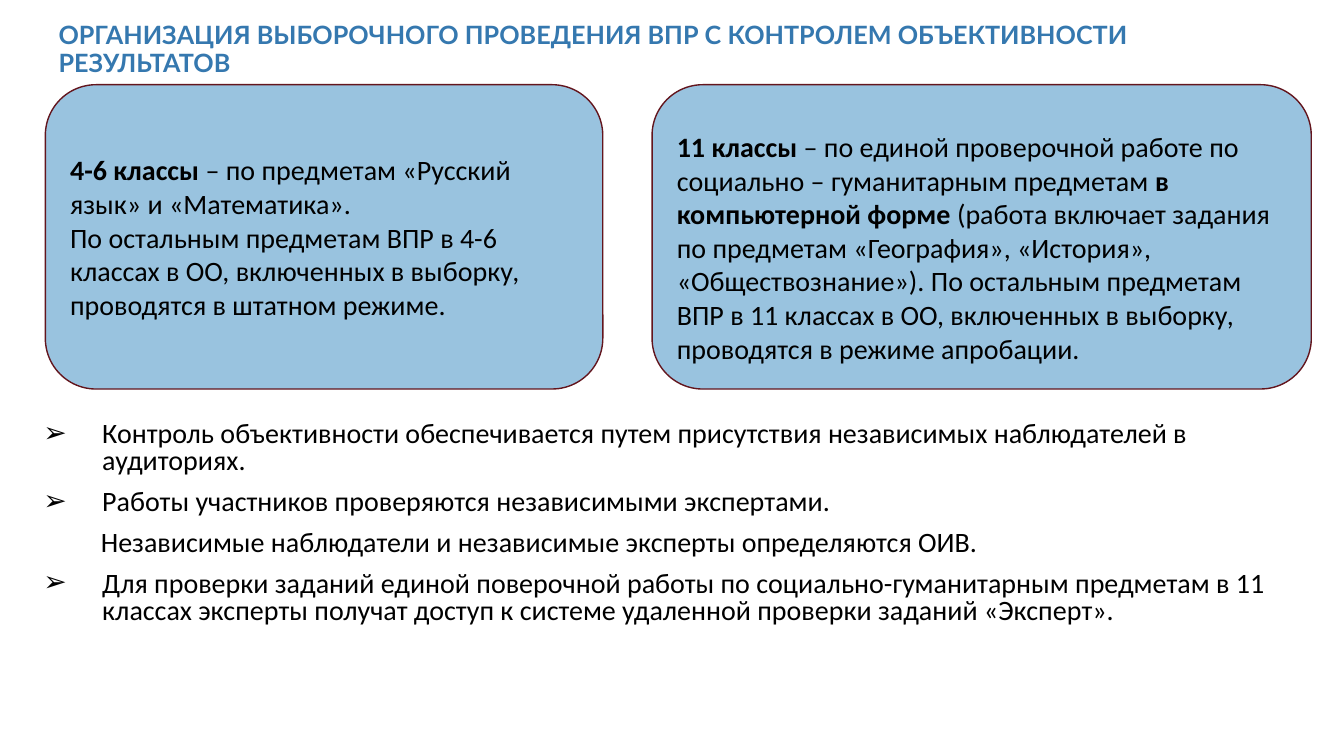
from lxml.etree import SubElement
from pptx import Presentation
from pptx.dml.color import RGBColor
from pptx.enum.shapes import MSO_SHAPE
from pptx.enum.text import MSO_ANCHOR, MSO_AUTO_SIZE, PP_ALIGN
from pptx.oxml.ns import qn
from pptx.util import Pt

# Content
TITLE = "ОРГАНИЗАЦИЯ ВЫБОРОЧНОГО ПРОВЕДЕНИЯ ВПР С КОНТРОЛЕМ ОБЪЕКТИВНОСТИ РЕЗУЛЬТАТОВ"
# Each card: left, width, top inset, paragraphs of (text, bold) runs
CARDS = [
    (32.4, 398.2, 3.6, [
        [("4-6 классы ", True),
         ("– по предметам «Русский язык» и «Математика».", False)],
        [("По остальным предметам ВПР в 4-6 классах в ОО, включенных в выборку, "
          "проводятся в штатном режиме.", False)],
    ]),
    (465.8, 470.9, 18.2, [
        [("11 классы ", True),
         ("– по единой проверочной работе по социально – гуманитарным предметам ", False),
         ("в компьютерной форме ", True),
         ("(работа включает задания по предметам «География», «История», "
          "«Обществознание»). По остальным предметам ВПР в 11 классах в ОО, "
          "включенных в выборку, проводятся в режиме апробации.", False)],
    ]),
]
# Each point: text, has a bullet
POINTS = [
    ("Контроль объективности обеспечивается путем присутствия независимых "
     "наблюдателей в аудиториях.", True),
    ("Работы участников проверяются независимыми экспертами.", True),
    ("Независимые наблюдатели и независимые эксперты определяются ОИВ.", False),
    ("Для проверки заданий единой поверочной работы по социально-гуманитарным "
     "предметам в 11 классах эксперты получат доступ к системе удаленной "
     "проверки заданий «Эксперт».", True),
]
TOP, HIGH = 60.5, 217.4
HANG = 42


def color(code):
    return RGBColor.from_string(code)


def style(para, name, size, code):
    para.alignment = PP_ALIGN.LEFT
    para.font.name = name
    para.font.size = Pt(size)
    para.font.color.rgb = color(code)


def place(shape, left, top, width, height):
    shape.left, shape.top = Pt(left), Pt(top)
    shape.width, shape.height = Pt(width), Pt(height)


def setup(frame, anchor, inset=3.6):
    frame.word_wrap = True
    frame.auto_size = MSO_AUTO_SIZE.NONE
    frame.vertical_anchor = anchor
    frame.margin_left = frame.margin_right = Pt(7.2)
    frame.margin_top, frame.margin_bottom = Pt(inset), Pt(3.6)


def add_para(frame, index):
    return frame.add_paragraph() if index else frame.paragraphs[0]


def bullet(para, shown):
    props = para._p.get_or_add_pPr()
    props.set("marL", str(Pt(HANG if shown else HANG - 1)))
    props.set("indent", str(Pt(-HANG if shown else 0)))
    if shown:
        SubElement(props, qn("a:buChar")).set("char", "➢")
    else:
        SubElement(props, qn("a:buNone"))


deck = Presentation()
deck.slide_width, deck.slide_height = Pt(960), Pt(540)
slide = deck.slides.add_slide(deck.slide_layouts[1])

# Title
title = slide.shapes.title
place(title, 34.6, 13, 892.8, 46)
setup(title.text_frame, MSO_ANCHOR.MIDDLE)
title.text_frame.text = TITLE
para = title.text_frame.paragraphs[0]
para.line_spacing = 0.9
style(para, "Lato", 18, "3578AF")
para.font.bold = True

# List
body = slide.placeholders[1]
place(body, 23.8, 285.8, 913, 180)
setup(body.text_frame, MSO_ANCHOR.TOP, 16)
for i, (text, shown) in enumerate(POINTS):
    para = add_para(body.text_frame, i)
    para.text = text
    bullet(para, shown)
    para.line_spacing = 0.8
    para.space_before = Pt(10 if i else 0)
    style(para, "Calibri", 20, "000000")

# Cards
for left, width, inset, paras in CARDS:
    card = slide.shapes.add_shape(
        MSO_SHAPE.ROUNDED_RECTANGLE, Pt(left), Pt(TOP), Pt(width), Pt(HIGH))
    card.shadow.inherit = False
    card.fill.solid()
    card.fill.fore_color.rgb = color("99C3DF")
    card.line.color.rgb = color("63151D")
    card.line.width = Pt(1)
    setup(card.text_frame, MSO_ANCHOR.MIDDLE, inset)
    for i, runs in enumerate(paras):
        para = add_para(card.text_frame, i)
        style(para, "Calibri", 20, "000000")
        for text, bold in runs:
            run = para.add_run()
            run.text = text
            run.font.bold = bold

deck.save("out.pptx")
